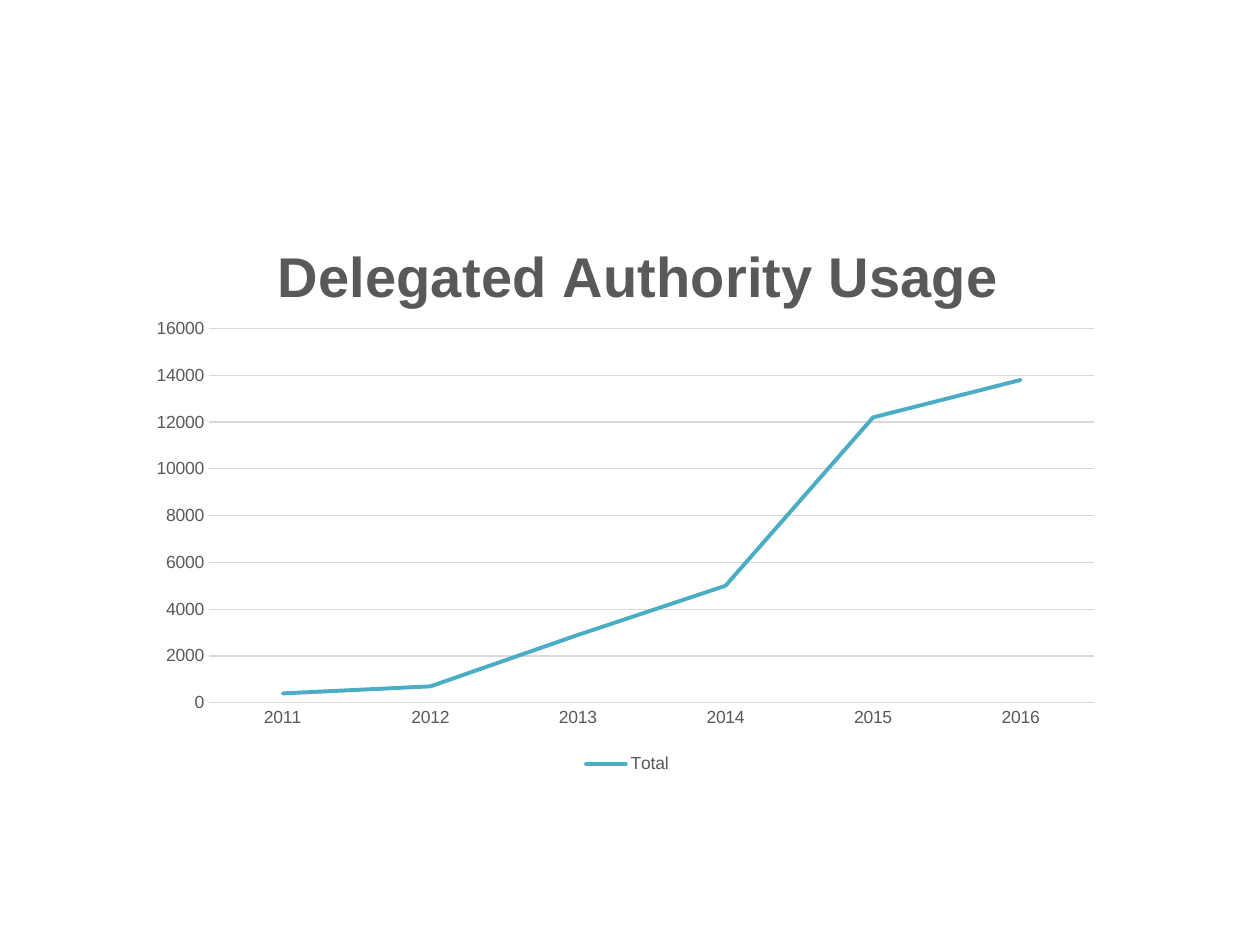
import pptx
import pptx.chart.data
import pptx.dml.color
import pptx.enum.chart
import pptx.oxml
import pptx.oxml.ns
import pptx.util

COLORS = {"text": "595959", "grid": "D9D9D9", "total": "4BACC6"}
PX = 914400 // 126
USAGE = {"2011": 400, "2012": 700, "2013": 2900,
         "2014": 5000, "2015": 12200, "2016": 13800}


class Deck:
    font = "Arial"

    def __init__(self, width, height):
        self.prs = pptx.Presentation()
        self.prs.slide_width = width * PX
        self.prs.slide_height = height * PX
        self.s = self.prs.slides.add_slide(self.prs.slide_layouts[6])

    def color(self, name):
        return pptx.dml.color.RGBColor.from_string(COLORS[name])

    def style_font(self, font, size, bold=False):
        font.name = self.font
        font.size = pptx.util.Pt(size)
        font.bold = bold
        font.color.rgb = self.color("text")

    def style_line(self, line, name, width):
        line.color.rgb = self.color(name)
        line.width = pptx.util.Pt(width)

    def layout(self, parent, target=None, **place):
        tags = f'<c:layoutTarget val="{target}"/>' if target else ""
        tags += '<c:xMode val="edge"/><c:yMode val="edge"/>'
        tags += "".join(f'<c:{k} val="{v}"/>' for k, v in place.items())
        ns = pptx.oxml.ns.nsdecls("c")
        layout = pptx.oxml.parse_xml(
            f"<c:layout {ns}><c:manualLayout>{tags}</c:manualLayout></c:layout>")
        for old in parent.findall(pptx.oxml.ns.qn("c:layout")):
            parent.remove(old)
        text = parent.find(pptx.oxml.ns.qn("c:tx"))
        if text is None:
            parent.insert(0, layout)
        else:
            text.addnext(layout)

    def line_chart(self, x, y, w, h, title, name, values):
        data = pptx.chart.data.CategoryChartData()
        data.categories = list(values)
        data.add_series(name, list(values.values()))
        chart = self.s.shapes.add_chart(
            pptx.enum.chart.XL_CHART_TYPE.LINE,
            x * PX, y * PX, w * PX, h * PX, data).chart
        self.style_font(chart.font, 10)

        chart.has_title = True
        tf = chart.chart_title.text_frame
        tf.text = title
        self.style_font(tf.paragraphs[0].font, 32, True)
        chart.chart_title.include_in_layout = False

        chart.has_legend = True
        chart.legend.position = pptx.enum.chart.XL_LEGEND_POSITION.BOTTOM
        chart.legend.include_in_layout = False
        self.style_font(chart.legend.font, 10)

        for axis in (chart.category_axis, chart.value_axis):
            axis.major_tick_mark = pptx.enum.chart.XL_TICK_MARK.NONE
            axis.minor_tick_mark = pptx.enum.chart.XL_TICK_MARK.NONE
            self.style_font(axis.tick_labels.font, 10)
        self.style_line(chart.category_axis.format.line, "grid", 0.75)
        axis = chart.value_axis
        axis.minimum_scale, axis.maximum_scale, axis.major_unit = 0, 16000, 2000
        axis.format.line.fill.background()
        self.style_line(axis.major_gridlines.format.line, "grid", 0.75)

        plot = chart.plots[0]
        plot.vary_by_categories = False
        series = plot.series[0]
        series.smooth = False
        series.marker.style = pptx.enum.chart.XL_MARKER_STYLE.NONE
        self.style_line(series.format.line, "total", 2.25)
        series.format.line._ln.set("cap", "rnd")
        return chart


def main():
    deck = Deck(1260, 945)
    chart = deck.line_chart(141, 194, 973, 585,
                            "Delegated Authority Usage", "Total", USAGE)
    deck.layout(chart.chart_title._element, x=0.13, y=0.06)
    plot_area = chart.plots[0]._element.getparent()
    deck.layout(plot_area, "inner", x=0.07, y=0.23, w=0.91, h=0.64)
    deck.prs.save("out.pptx")


if __name__ == "__main__":
    main()
